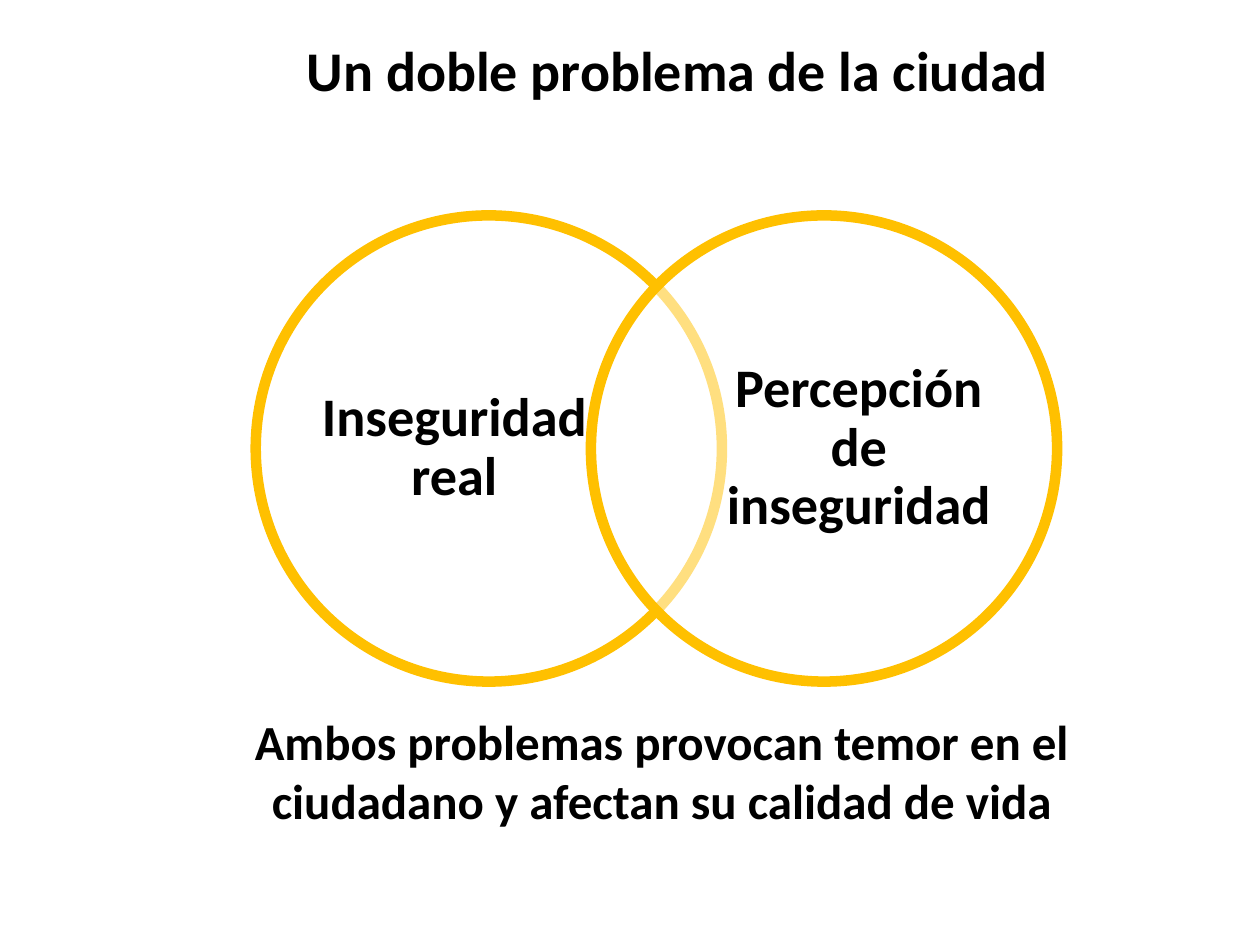
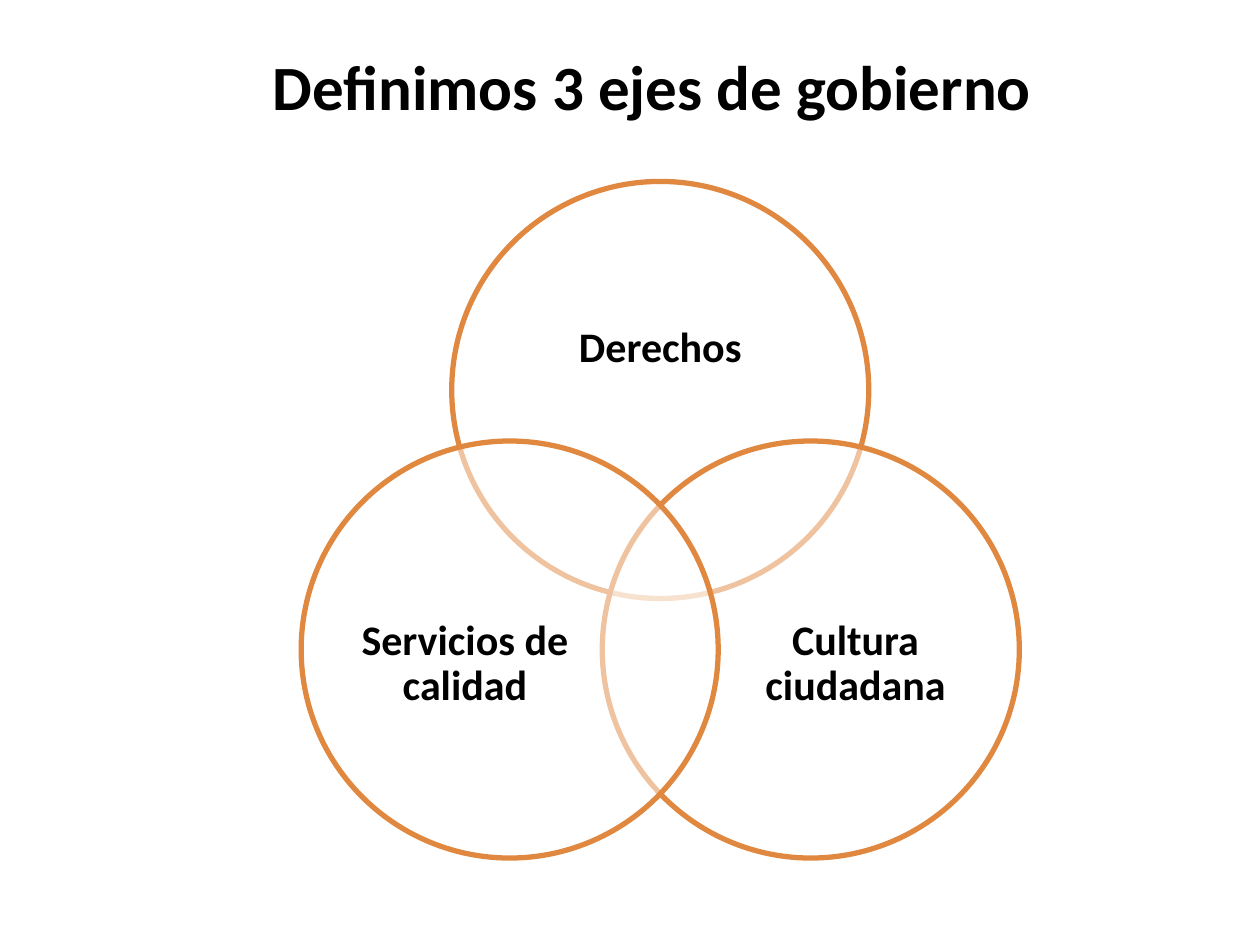
from lxml.etree import SubElement
from pptx import Presentation
from pptx.dml.color import RGBColor
from pptx.enum.shapes import MSO_SHAPE
from pptx.enum.text import MSO_ANCHOR, PP_ALIGN
from pptx.oxml.ns import qn
from pptx.util import Inches, Pt

FONT = "Calibri"
BLACK, WHITE = "000000", "FFFFFF"
GOLD, ORANGE = "FFC000", "E08840"
TITLE_ONLY = 5


def color(code):
    return RGBColor.from_string(code)


def place(shape, box):
    shape.left, shape.top, shape.width, shape.height = map(Inches, box)


def write(shape, text, size, anchor=MSO_ANCHOR.TOP, spacing=1.0):
    """Fill a shape with one centred, bold, black paragraph."""
    frame = shape.text_frame
    frame.word_wrap = True
    frame.vertical_anchor = anchor
    frame.text = text
    para = frame.paragraphs[0]
    para.alignment = PP_ALIGN.CENTER
    para.line_spacing = spacing
    for run in para.runs:
        font = run.font
        font.name, font.size, font.bold = FONT, Pt(size), True
        font.color.rgb = color(BLACK)
    return frame


def add_text(slide, box, text, size, **style):
    return write(slide.shapes.add_textbox(*map(Inches, box)), text, size, **style)


def add_slide(deck, title, box, size):
    slide = deck.slides.add_slide(deck.slide_layouts[TITLE_ONLY])
    place(slide.shapes.title, box)
    write(slide.shapes.title, title, size)
    return slide


def add_ring(slide, box, line, weight):
    """Draw a circle whose white fill is half transparent."""
    ring = slide.shapes.add_shape(MSO_SHAPE.OVAL, *map(Inches, box))
    ring.shadow.inherit = False
    ring.fill.solid()
    ring.fill.fore_color.rgb = color(WHITE)
    tint = ring.fill._xPr.find(qn("a:solidFill"))[0]
    SubElement(tint, qn("a:alpha")).set("val", "50000")
    ring.line.color.rgb = color(line)
    ring.line.width = Pt(weight)


def add_label(slide, box, text, size):
    frame = add_text(slide, box, text, size, anchor=MSO_ANCHOR.MIDDLE, spacing=0.9)
    frame.margin_left = frame.margin_right = 0
    frame.margin_top = frame.margin_bottom = 0


def add_pair(slide, box, names):
    """Two rings side by side, as tall as the box, labels near the outer edges."""
    left, top, width, side = box
    inset, wide, high = 0.51, 2.13, 2.83
    label_top = top + (side - high) / 2
    spots = [(left, left + inset),
             (left + width - side, left + width - inset - wide)]
    for name, (ring_left, label_left) in zip(names, spots):
        add_ring(slide, (ring_left, top, side, side), GOLD, 6)
        add_label(slide, (label_left, label_top, wide, high), name, 31)


def add_trio(slide, box, names):
    """One ring above two, clockwise from the top."""
    left, top, width, height = box
    side, inset, wide = 3.31, 0.31, 1.98
    low = top + height - side
    mid = left + (width - side) / 2
    right = left + width
    cap = 2.42
    spots = [
        ((mid, top), (mid + (side - cap) / 2, top + 0.58, cap, 1.49)),
        ((right - side, low), (right - inset - wide, low + 0.86, wide, 1.82)),
        ((left, low), (left + inset, low + 0.86, wide, 1.82)),
    ]
    for name, (corner, label) in zip(names, spots):
        add_ring(slide, (*corner, side, side), ORANGE, 3)
        add_label(slide, label, name, 24)


def main():
    deck = Presentation()
    deck.slide_width, deck.slide_height = Inches(10), Inches(7.5)

    slide = add_slide(deck, "Un doble problema de la ciudad", (1.53, 0.23, 7.7, 0.64), 32)
    add_pair(slide, (2.03, 1.71, 6.36, 3.7),
             ["Inseguridad real", "Percepción de inseguridad"])
    add_text(slide, (1.54, 5.6, 7.42, 1.04),
             "Ambos problemas provocan temor en el ciudadano y afectan su calidad de vida", 28)

    slide = add_slide(deck, "Definimos 3 ejes de gobierno", (1.12, 0.33, 8.11, 0.71), 36)
    add_trio(slide, (2.39, 1.44, 5.7, 5.37),
             ["Derechos", "Cultura ciudadana", "Servicios de calidad"])

    deck.save("out.pptx")


if __name__ == "__main__":
    main()
